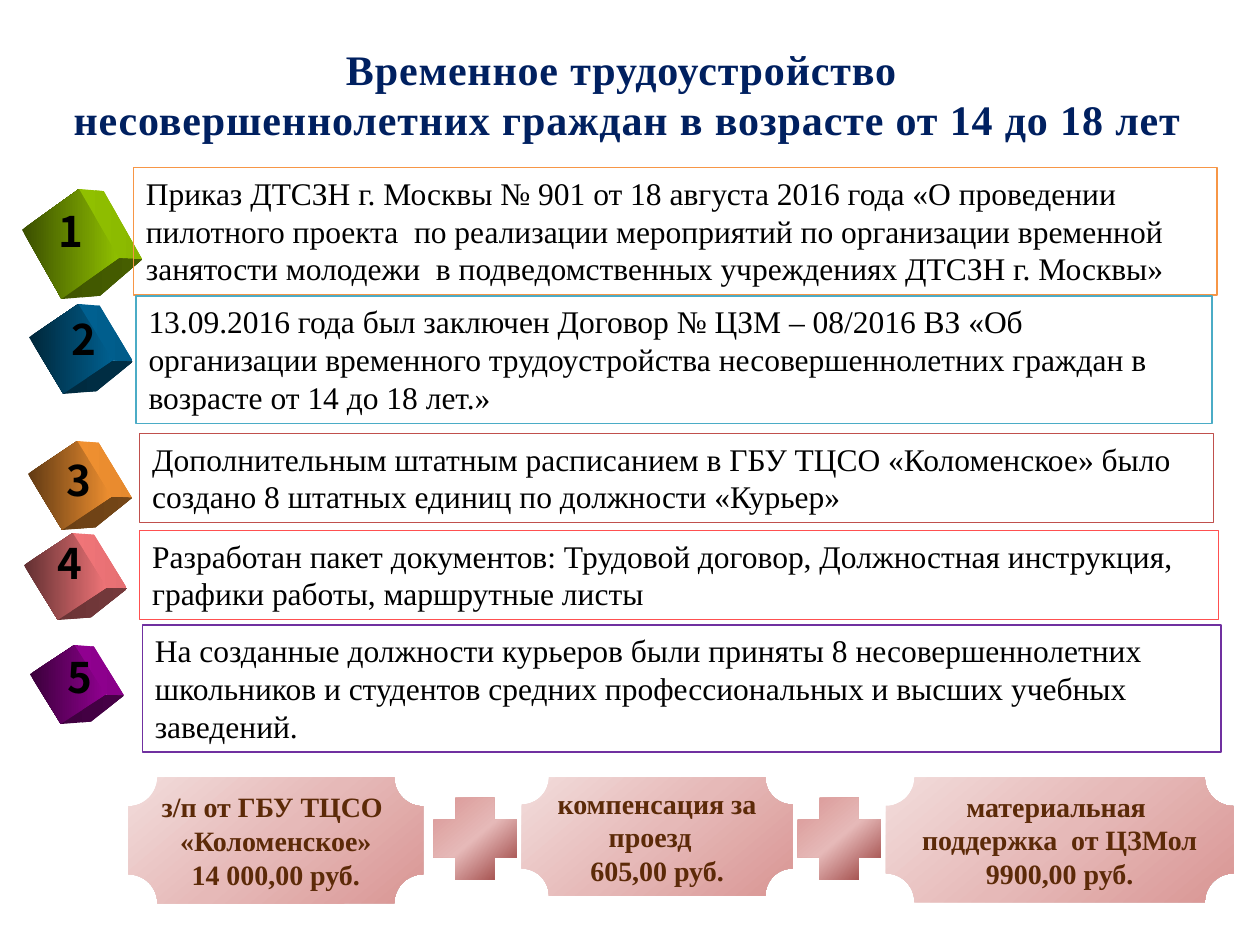
from copy import deepcopy
from dataclasses import dataclass

from pptx import Presentation
from pptx.dml.color import RGBColor
from pptx.enum.shapes import MSO_SHAPE
from pptx.enum.text import MSO_ANCHOR, PP_ALIGN
from pptx.util import Pt

PLAQUE, PLUS = MSO_SHAPE.PLAQUE, MSO_SHAPE.CROSS
RECTANGLE = MSO_SHAPE.RECTANGLE
TOP, MIDDLE = MSO_ANCHOR.TOP, MSO_ANCHOR.MIDDLE
LEFT, CENTER = PP_ALIGN.LEFT, PP_ALIGN.CENTER


@dataclass(frozen=True)
class Theme:
    font: str = "Times New Roman"
    number_font: str = "Noto Sans CJK KR"
    title_size: int = 24
    body_size: int = 18
    payment_size: int = 16
    title: str = "002060"
    body: str = "000000"
    payment: str = "5C2A08"
    plaque_stops: tuple = ("F2DCDB", "E6B9B8", "D99694")
    plus_stops: tuple = ("D99694", "E6B9B8", "953735")


THEME = Theme()

TITLE = ("Временное трудоустройство \v"
         "несовершеннолетних граждан в возрасте от 14 до 18 лет")

# Cube box, cube colour, number position, frame box, frame colour, lines
STEPS = [
    ((12.6, 108, 68.6, 62.9), "99CC00", (26.6, 113.8),
     (76.3, 95.8, 619.2, 72.7), "F79646",
     ["Приказ ДТСЗН г. Москвы № 901 от 18 августа 2016 года «О проведении",
      "пилотного проекта  по реализации мероприятий по организации временной",
      "занятости молодежи  в подведомственных учреждениях ДТСЗН г. Москвы»"]),
    ((16.6, 173.7, 59.4, 51.4), "006699", (33.8, 175.7),
     (77.8, 169.2, 614.9, 72.7), "4BACC6",
     ["13.09.2016 года был заключен Договор № ЦЗМ – 08/2016 ВЗ «Об",
      "организации временного трудоустройства несовершеннолетних граждан в",
      "возрасте от 14 до 18 лет.»"]),
    ((16, 252, 59.4, 50.9), "FF9933", (31, 256.3),
     (79.9, 247.7, 613.4, 51.1), "C0504D",
     ["Дополнительным штатным расписанием в ГБУ ТЦСО «Коломенское» было",
      "создано 8 штатных единиц по должности «Курьер»"]),
    ((13.7, 304.6, 58.9, 49.7), "FF7C80", (25.5, 303.8),
     (79.9, 303.1, 616.3, 51.1), "FF5050",
     ["Разработан пакет документов: Трудовой договор, Должностная инструкция,",
      "графики работы, маршрутные листы"]),
    ((17.1, 368.6, 53.7, 45.1), "990099", (31.7, 368.6),
     (81.4, 357.1, 616.3, 72.7), "7030A0",
     ["На созданные должности курьеров были приняты 8 несовершеннолетних",
      "школьников и студентов средних профессиональных и высших учебных",
      "заведений."]),
]

PAYMENT_TOP = 444.2
PAYMENTS = [
    (73.4, 168.5, 72, ["з/п от ГБУ ТЦСО ", "«Коломенское»", "14 000,00 руб."]),
    (298.1, 154.8, 67.7, ["компенсация за проезд  ", "605,00 руб."]),
    (506.2, 198.7, 71.3,
     ["материальная ", "поддержка  от ЦЗМол", "9900,00 руб."]),
]
PLUS_LEFTS = (247.7, 455.8)

# Corners of a tilted cube as shares of its box
WEST, NORTH, NORTH_EAST, EAST = (0, .37), (.475, 0), (.68, .02), (1, .64)
SOUTH_EAST, SOUTH, INNER = (.65, .97), (.33, 1), (.81, .63)


def shade(color, factor):
    return "".join(f"{round(int(color[i:i + 2], 16) * factor):02X}"
                   for i in (0, 2, 4))


def fill_gradient(shape, colors, clockwise_angle):
    fill = shape.fill
    fill.gradient()
    fill.gradient_angle = (360 - clockwise_angle) % 360
    stops = shape.element.spPr.xpath(".//a:gsLst")[0]
    while len(stops) < len(colors):
        stops.append(deepcopy(stops[-1]))
    for index, color in enumerate(colors):
        stop = fill.gradient_stops[index]
        stop.color.rgb = RGBColor.from_string(color)
        stop.position = index / (len(colors) - 1)


def write(shape, lines, size, color, font=THEME.font, bold=False,
          align=LEFT, anchor=TOP):
    frame = shape.text_frame
    frame.word_wrap = True
    frame.vertical_anchor = anchor
    frame.text = "\n".join(lines)
    for paragraph in frame.paragraphs:
        paragraph.alignment = align
        paragraph.font.name = font
        paragraph.font.size = Pt(size)
        paragraph.font.bold = bold
        paragraph.font.color.rgb = RGBColor.from_string(color)


def add_preset(slide, kind, box):
    shape = slide.shapes.add_shape(kind, *map(Pt, box))
    shape.shadow.inherit = False
    return shape


def add_title(slide):
    title = slide.shapes.title
    title.left, title.top = Pt(16.6), Pt(22.3)
    title.width, title.height = Pt(684), Pt(62.6)
    write(title, [TITLE], THEME.title_size, THEME.title,
          bold=True, align=CENTER, anchor=MIDDLE)
    for run in title.text_frame.paragraphs[0].runs:
        run.font._element.set("spc", "50")


def add_face(slide, box, corners, colors):
    left, top, width, height = box
    points = [(Pt(left + x * width), Pt(top + y * height)) for x, y in corners]
    builder = slide.shapes.build_freeform(*points[0])
    builder.add_line_segments(points[1:], close=True)
    face = builder.convert_to_shape()
    face.shadow.inherit = False
    face.line.fill.background()
    fill_gradient(face, colors, 0)


def add_cube(slide, box, color):
    add_face(slide, box, (WEST, NORTH, INNER, SOUTH),
             (shade(color, .38), shade(color, .94)))
    add_face(slide, box, (NORTH, NORTH_EAST, EAST, INNER),
             (shade(color, .94), shade(color, .9)))
    add_face(slide, box, (SOUTH, INNER, EAST, SOUTH_EAST),
             (shade(color, .42), shade(color, .46)))


def add_step(slide, number, cube, color, number_at, box, frame_color, lines):
    add_cube(slide, cube, color)
    frame = add_preset(slide, RECTANGLE, box)
    frame.fill.background()
    frame.line.color.rgb = RGBColor.from_string(frame_color)
    frame.line.width = Pt(0.75)
    write(frame, lines, THEME.body_size, THEME.body)
    label = slide.shapes.add_textbox(*map(Pt, (*number_at, 32, 36)))
    write(label, [str(number)], THEME.title_size, THEME.body,
          font=THEME.number_font, bold=True)


def add_badge(slide, kind, box, adjustment, colors):
    badge = add_preset(slide, kind, box)
    badge.adjustments[0] = adjustment
    badge.line.fill.background()
    fill_gradient(badge, colors, 50)
    return badge


def main():
    prs = Presentation()
    prs.slide_width, prs.slide_height = Pt(720), Pt(540)
    slide = prs.slides.add_slide(prs.slide_layouts[5])

    add_title(slide)

    # Numbered steps
    for number, step in enumerate(STEPS, 1):
        add_step(slide, number, *step)

    # Sum of payments
    for left, width, height, lines in PAYMENTS:
        plaque = add_badge(slide, PLAQUE, (left, PAYMENT_TOP, width, height),
                           0.23, THEME.plaque_stops)
        write(plaque, lines, THEME.payment_size, THEME.payment,
              bold=True, align=CENTER, anchor=MIDDLE)
    for left in PLUS_LEFTS:
        add_badge(slide, PLUS, (left, 455.8, 47.5, 46.8),
                  0.27, THEME.plus_stops)

    prs.save("out.pptx")


if __name__ == "__main__":
    main()
